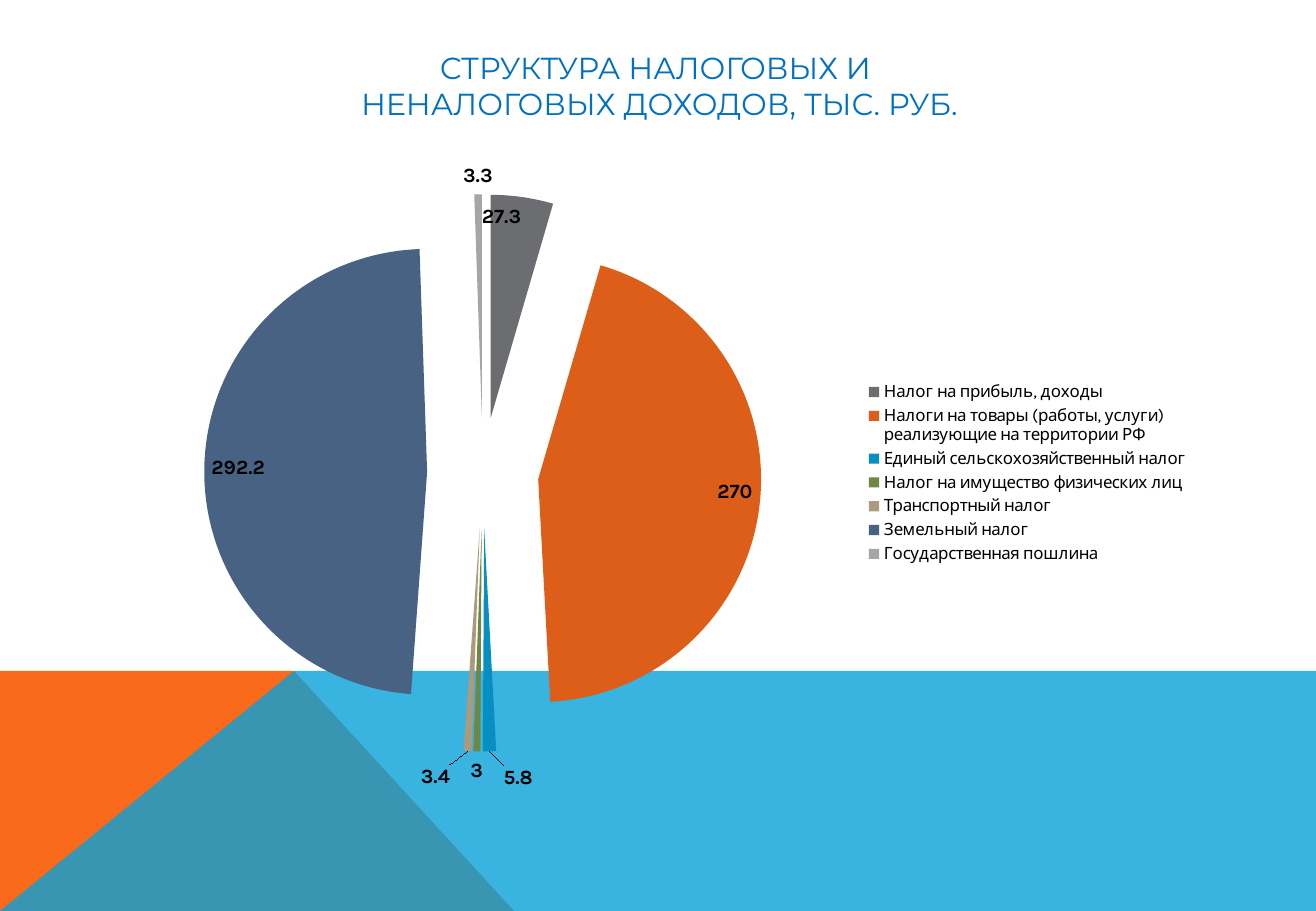
from lxml.etree import SubElement
from pptx import Presentation
from pptx.chart.data import CategoryChartData
from pptx.dml.color import RGBColor
from pptx.enum.chart import XL_CHART_TYPE, XL_LABEL_POSITION, XL_LEGEND_POSITION
from pptx.enum.text import MSO_ANCHOR, PP_ALIGN
from pptx.oxml import parse_xml
from pptx.oxml.ns import nsdecls, qn
from pptx.util import Pt

SCALE = 914400 / 121.5  # EMU per px
SLIDE_SIZE = (1316, 911)
COLORS = {
    "title": "0070C0", "text": "000000", "band_orange": "F96A1B", "band_blue": "08A1D9",
    "gray": "6C6D70", "orange": "DC5E18", "blue": "088FC1", "green": "6E8742",
    "tan": "AC9A7E", "navy": "476283", "silver": "A5A6A8",
}
TITLE_LINES = ["СТРУКТУРА НАЛОГОВЫХ И ", "НЕНАЛОГОВЫХ ДОХОДОВ, ТЫС. РУБ."]
TITLE_BOX = (118, 49, 1083, 73)
CHART_BOX = (103, 146, 1098, 654)
PIE_BOX = (260, 250, 446, 446)  # the circle before its slices move apart
EXPLOSION = 25
BANDS = [  # points, color, opacity in percent
    ([(0, 911), (0, 671), (294, 671), (514, 911)], "band_orange", 100),
    ([(0, 911), (294, 671), (1316, 671), (1316, 911)], "band_blue", 80),
]
INSIDE, OUTSIDE = XL_LABEL_POSITION.INSIDE_END, XL_LABEL_POSITION.OUTSIDE_END
INCOME = [  # category, value, color, label position, label shift in px
    ("Налог на прибыль, доходы", 27.3, "gray", INSIDE, 0),
    ("Налоги на товары (работы, услуги) реализующие на территории РФ", 270, "orange", INSIDE, 0),
    ("Единый сельскохозяйственный налог", 5.8, "blue", OUTSIDE, 28),
    ("Налог на имущество физических лиц", 3, "green", OUTSIDE, 0),
    ("Транспортный налог", 3.4, "tan", OUTSIDE, -32),
    ("Земельный налог", 292.2, "navy", INSIDE, 0),
    ("Государственная пошлина", 3.3, "silver", OUTSIDE, 0),
]


def px(length):
    return round(length * SCALE)


def color(name):
    return RGBColor.from_string(COLORS[name])


def style_font(font, name, size, color_name, bold=False):
    font.name, font.size, font.bold = name, Pt(size), bold
    font.color.rgb = color(color_name)


def manual_layout(**settings):
    layout = parse_xml(f"<c:layout {nsdecls('c')}><c:manualLayout/></c:layout>")
    for tag, value in settings.items():
        SubElement(layout[0], qn(f"c:{tag}")).set("val", str(value))
    return layout


def add_band(slide, points, color_name, opacity):
    builder = slide.shapes.build_freeform(*points[0], scale=SCALE)
    builder.add_line_segments(points[1:], close=True)
    band = builder.convert_to_shape()
    band.shadow.inherit = False
    band.line.fill.background()
    band.fill.solid()
    band.fill.fore_color.rgb = color(color_name)
    if opacity < 100:
        fill_color = band._element.spPr.find(qn("a:solidFill"))[0]
        SubElement(fill_color, qn("a:alpha")).set("val", str(opacity * 1000))


def add_title(slide):
    title = slide.shapes.title
    title.left, title.top, title.width, title.height = map(px, TITLE_BOX)
    title.text_frame.vertical_anchor = MSO_ANCHOR.MIDDLE
    paragraph = title.text_frame.paragraphs[0]
    paragraph.alignment = PP_ALIGN.CENTER
    for index, line in enumerate(TITLE_LINES):
        if index:
            paragraph.add_line_break()
        run = paragraph.add_run()
        run.text = line
        style_font(run.font, "Montserrat", 18, "title")


def add_income_pie(slide):
    data = CategoryChartData()
    data.categories = [row[0] for row in INCOME]
    data.add_series("Series 1", [row[1] for row in INCOME])
    chart = slide.shapes.add_chart(XL_CHART_TYPE.PIE, *map(px, CHART_BOX), data).chart
    chart.has_title = False
    style_font(chart.font, "Karla", 10, "text")
    chart.has_legend = True
    chart.legend.position = XL_LEGEND_POSITION.RIGHT
    chart.legend.include_in_layout = False

    left, top, width, height = CHART_BOX
    plot_area = chart._chartSpace.chart.plotArea
    for old_layout in plot_area.findall(qn("c:layout")):
        plot_area.remove(old_layout)
    plot_area.insert(0, manual_layout(
        layoutTarget="inner", xMode="edge", yMode="edge",
        x=round((PIE_BOX[0] - left) / width, 3), y=round((PIE_BOX[1] - top) / height, 3),
        w=round(PIE_BOX[2] / width, 3), h=round(PIE_BOX[3] / height, 3)))

    plot = chart.plots[0]
    plot.vary_by_categories = True
    series = plot.series[0]
    labels = series.data_labels
    labels.show_value = True
    style_font(labels.font, "Karla", 12, "text", bold=True)
    for index, (_, _, color_name, position, shift) in enumerate(INCOME):
        point = series.points[index]
        point.format.fill.solid()
        point.format.fill.fore_color.rgb = color(color_name)
        point.format.line.fill.background()
        label = point.data_label
        style_font(label.font, "Karla", 12, "text", bold=True)
        label.position = position
        if shift:
            label_index = series._element.xpath(f"c:dLbls/c:dLbl/c:idx[@val='{index}']")[0]
            label_index.addnext(manual_layout(x=round(shift / width, 3), y=0.01))
    for data_point in series._element.findall(qn("c:dPt")):
        explosion = parse_xml(f'<c:explosion {nsdecls("c")} val="{EXPLOSION}"/>')
        data_point.find(qn("c:spPr")).addprevious(explosion)


def main():
    presentation = Presentation()
    presentation.slide_width, presentation.slide_height = map(px, SLIDE_SIZE)
    slide = presentation.slides.add_slide(presentation.slide_layouts[5])
    for band in BANDS:
        add_band(slide, *band)
    add_title(slide)
    add_income_pie(slide)
    presentation.save("out.pptx")


if __name__ == "__main__":
    main()
